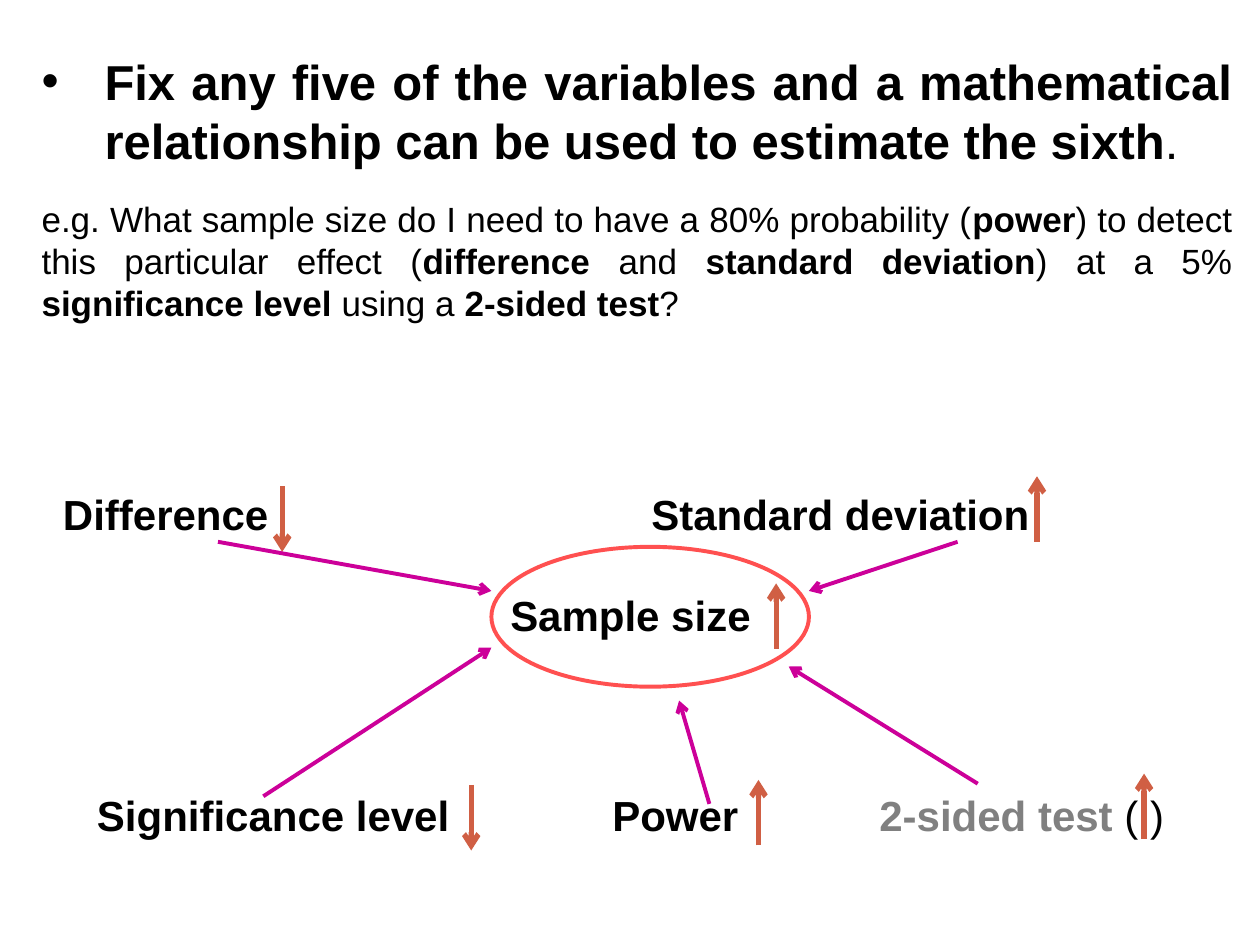
from lxml import etree
from pptx import Presentation
from pptx import util as u
from pptx.dml.color import RGBColor
from pptx.enum import shapes, text
from pptx.oxml import ns

INK, GREY = "000000", "808080"
TREND, LINK, RING = "D05F44", "CC0099", "FF5050"


def paint(part, tone):
    """Set a colour format from a hex string."""
    part.rgb = RGBColor.from_string(tone)


def write(para, words, size=24, bold=False, tone=INK):
    """Add one formatted run to a paragraph."""
    run = para.add_run()
    run.text = words
    run.font.name = "Arial"
    run.font.size = u.Pt(size)
    run.font.bold = bold
    paint(run.font.color, tone)


def block(para, parts, size, gap=0, hang=0):
    """Fill a justified paragraph with alternating weights of text."""
    para.alignment = text.PP_ALIGN.JUSTIFY
    para.line_spacing = 1.0
    para.space_before = u.Pt(gap)
    props = para._p.get_or_add_pPr()
    props.set("marL", str(u.Inches(hang)))
    props.set("indent", str(-u.Inches(hang)))
    if not hang:
        etree.SubElement(props, ns.qn("a:buNone"))
    for words, bold in parts:
        write(para, words, size=size, bold=bold)


def intro(slide, left, top, width, height):
    """Place the rule and its example in the body placeholder."""
    body = slide.placeholders[1]
    body.left, body.top = u.Inches(left), u.Inches(top)
    body.width, body.height = u.Inches(width), u.Inches(height)
    frame = body.text_frame
    frame.auto_size = text.MSO_AUTO_SIZE.NONE
    frame.vertical_anchor = text.MSO_ANCHOR.TOP
    block(frame.paragraphs[0], [
        ("Fix any five of the variables and a mathematical relationship "
         "can be used to estimate the sixth", True), (".", False)],
        size=28, hang=0.5)
    block(frame.add_paragraph(), [
        ("e.g. What sample size do I need to have a 80% probability (", False),
        ("power", True), (") to detect this particular effect (", False),
        ("difference", True), (" and ", False),
        ("standard deviation", True), (") at a 5% ", False),
        ("significance level ", True), ("using a ", False),
        ("2-sided test", True), ("?", False)], size=20, gap=16)


def label(slide, left, top, width, parts):
    """Place one variable name made of words, weight and colour."""
    box = slide.shapes.add_textbox(
        u.Inches(left), u.Inches(top), u.Inches(width), u.Inches(0.4))
    frame = box.text_frame
    frame.word_wrap = True
    frame.vertical_anchor = text.MSO_ANCHOR.MIDDLE
    frame.margin_left = frame.margin_right = 0
    frame.margin_top = frame.margin_bottom = 0
    for words, bold, tone in parts:
        write(frame.paragraphs[0], words, bold=bold, tone=tone)


def arrow(slide, start, end, tone, weight):
    """Draw a straight arrow between two points."""
    line = slide.shapes.add_connector(
        shapes.MSO_CONNECTOR.STRAIGHT, *map(u.Inches, (*start, *end)))
    paint(line.line.color, tone)
    line.line.width = u.Pt(weight)
    etree.SubElement(line.line._ln, ns.qn("a:tailEnd"), type="arrow")
    etree.SubElement(line._element.spPr, ns.qn("a:effectLst"))


def ring(slide, left, top, width, height):
    """Draw the ellipse around the sample size."""
    oval = slide.shapes.add_shape(
        shapes.MSO_SHAPE.OVAL,
        *map(u.Inches, (left, top, width, height)))
    oval.shadow.inherit = False
    oval.fill.background()
    paint(oval.line.color, RING)
    oval.line.width = u.Pt(2.25)


def diagram(slide, left, top):
    """Place the five variables around the sample size."""
    high, mid, low = 0.1, 0.9, 2.49
    items = [
        (0.38, high, 1.8, [("Difference", True, INK)], 2.12, 0.08, False),
        (5.05, high, 3.3, [("Standard deviation", True, INK)], 8.11, 0, True),
        (3.93, mid, 2.1, [("Sample size", True, INK)], 6.04, 0.85, True),
        (0.65, low, 3, [("Significance level", True, INK)],
         3.62, 2.45, False),
        (4.74, low, 1.2, [("Power", True, INK)], 5.9, 2.41, True),
        (6.86, low, 2.6,
         [("2-sided test ", True, GREY), ("( )", False, INK)],
         8.96, 2.36, True),
    ]
    links = [
        ((1.61, 0.52), (3.78, 0.91)),
        ((7.48, 0.52), (6.3, 0.91)),
        ((1.97, 2.54), (3.78, 1.36)),
        ((7.64, 2.44), (6.14, 1.51)),
        ((5.51, 2.6), (5.27, 1.78)),
    ]
    ring(slide, left + 3.78, top + 0.56, 2.52, 1.11)
    for x, y, width, parts, mark, head, rise in items:
        label(slide, left + x, top + y, width, parts)
        ends = [(left + mark, top + head), (left + mark, top + head + 0.52)]
        start, end = reversed(ends) if rise else ends
        arrow(slide, start, end, TREND, 3)
    for start, end in links:
        arrow(slide, (left + start[0], top + start[1]),
              (left + end[0], top + end[1]), LINK, 2.25)


def main():
    """Build and save the slide."""
    deck = Presentation()
    deck.slide_width, deck.slide_height = u.Inches(10), u.Inches(7.5)
    slide = deck.slides.add_slide(deck.slide_layouts[1])
    title = slide.shapes.title._element
    title.getparent().remove(title)
    intro(slide, 0.23, 0.36, 9.65, 2.29)
    diagram(slide, 0.12, 3.78)
    deck.save("out.pptx")


if __name__ == "__main__":
    main()
